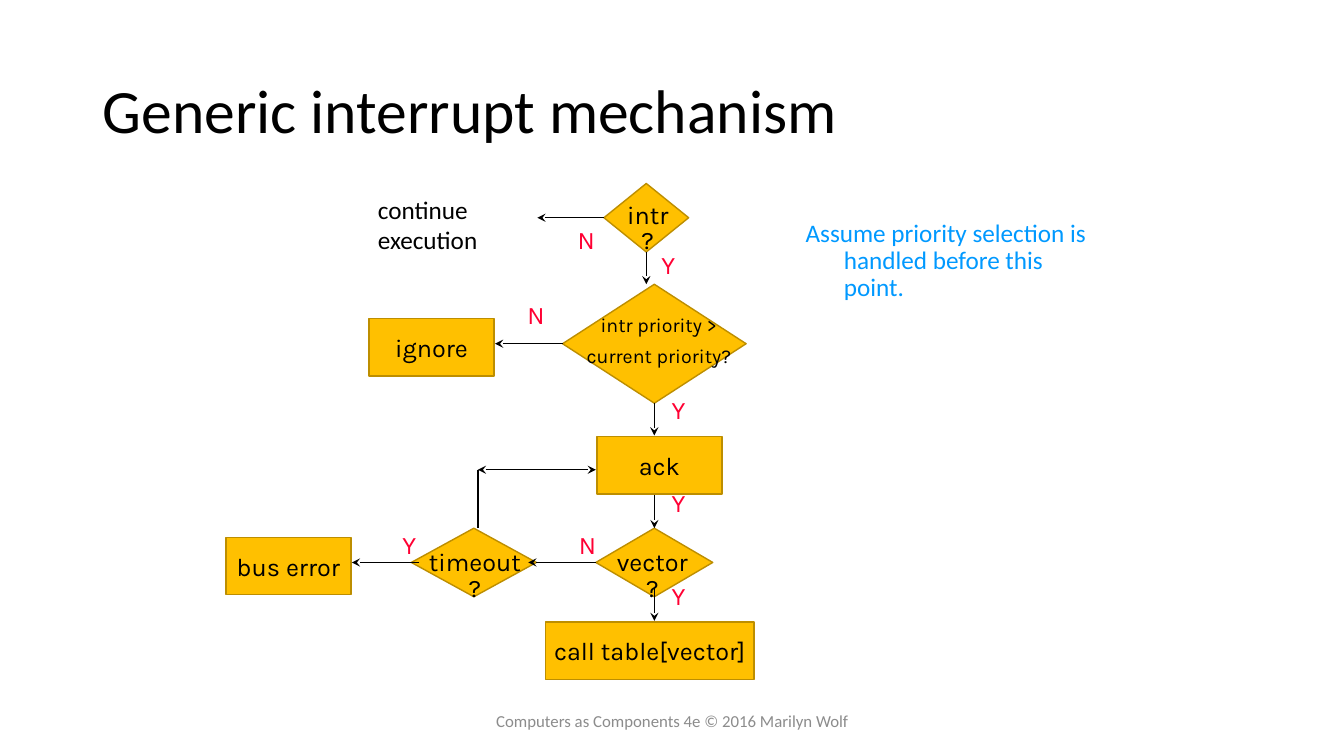
from pptx import Presentation
from pptx.dml.color import RGBColor
from pptx.enum.shapes import MSO_CONNECTOR, MSO_SHAPE
from pptx.enum.text import MSO_ANCHOR, PP_ALIGN
from pptx.oxml.ns import qn
from pptx.util import Inches, Pt
from lxml.etree import SubElement

BLACK, AMBER, AMBER_EDGE = "000000", "FFC000", "BD8E00"
RED, BLUE, GRAY = "FF0033", "0099FF", "8C8C8C"
TOP, LEFT, BOTTOM = 0, 1, 2


def color(hex_string):
    return RGBColor.from_string(hex_string)


def apply(target, values):
    for name, value in values.items():
        setattr(target, name, value)


class FlowchartPage:
    """Hold the slide and its style, and draw each kind of flowchart element."""

    def __init__(self, page):
        self.page = page

    def fill_text(self, shape, lines, size=18, font="Karla", ink=BLACK, align=PP_ALIGN.LEFT,
                  spacing=1.0, gap=0, hanging=0, anchor=MSO_ANCHOR.TOP, margins=(0.1, 0.05),
                  wrap=True):
        frame = shape.text_frame
        side, edge = (Inches(margin) for margin in margins)
        apply(frame, {"word_wrap": wrap, "vertical_anchor": anchor, "margin_left": side,
                      "margin_right": side, "margin_top": edge, "margin_bottom": edge})
        for index, line in enumerate(lines):
            para = frame.add_paragraph() if index else frame.paragraphs[0]
            apply(para, {"alignment": align, "line_spacing": spacing,
                         "space_before": Pt(gap if index else 0)})
            if hanging:
                properties = para._p.get_or_add_pPr()
                properties.set("marL", str(Inches(hanging)))
                properties.set("indent", str(-Inches(hanging)))
            span = para.add_run()
            span.text = line
            apply(span.font, {"size": Pt(size), "name": font})
            span.font.color.rgb = color(ink)

    def title(self, words, place):
        box = self.page.shapes.title
        apply(box, dict(zip(("left", "top", "width", "height"), map(Inches, place))))
        self.fill_text(box, [words], size=44, font="Calibri", spacing=0.9,
                       anchor=MSO_ANCHOR.MIDDLE)

    def text(self, lines, place, **style):
        box = self.page.shapes.add_textbox(*map(Inches, place))
        self.fill_text(box, lines, **style)

    def label(self, words, place, **style):
        self.text([words], place, spacing=0.85, margins=(0.07, 0.03), **style)

    def node(self, kind, place):
        shape = self.page.shapes.add_shape(kind, *map(Inches, place))
        shape.shadow.inherit = False
        shape.fill.solid()
        shape.fill.fore_color.rgb = color(AMBER)
        shape.line.color.rgb = color(AMBER_EDGE)
        shape.line.width = Pt(1)
        return shape

    def step(self, words, left, top, width=1.24):
        shape = self.node(MSO_SHAPE.RECTANGLE, (left, top, width, 0.57))
        self.fill_text(shape, [words], align=PP_ALIGN.CENTER, anchor=MSO_ANCHOR.MIDDLE, wrap=False)

    def arrow(self, start, end, begin=None, finish=None, heads=("tailEnd",)):
        line = self.page.shapes.add_connector(MSO_CONNECTOR.STRAIGHT, *map(Inches, start + end))
        if begin:
            line.begin_connect(*begin)
        if finish:
            line.end_connect(*finish)
        line.line.color.rgb = color(BLACK)
        line.line.width = Pt(1)
        outline = line.line._get_or_add_ln()
        for head in heads:
            SubElement(outline, qn(f"a:{head}"), type="stealth")
        SubElement(line._element.spPr, qn("a:effectLst"))


def main():
    deck = Presentation()
    deck.slide_width, deck.slide_height = Inches(13.33), Inches(7.5)
    chart = FlowchartPage(deck.slides.add_slide(deck.slide_layouts[5]))
    chart.title("Generic interrupt mechanism", (0.92, 0.4, 11.5, 1.45))

    chart.node(MSO_SHAPE.DIAMOND, (4.08, 5.24, 1.24, 0.68))
    intr, priority, vector = (
        chart.node(MSO_SHAPE.DIAMOND, place) for place in (
            (5.99, 1.82, 0.84, 0.68), (5.58, 2.82, 1.82, 1.18), (5.91, 5.24, 1.16, 0.68)))

    chart.step("ignore", 3.66, 3.16)
    chart.step("ack", 5.92, 4.33)
    chart.step("bus error", 2.24, 5.33)
    chart.step("call table[vector]", 5.41, 6.17, 2.07)

    for question, left, top, width in (("intr?", 6.11, 1.99, 0.63), ("vector?", 6, 5.44, 0.94),
                                       ("timeout?", 4.16, 5.44, 1.1)):
        chart.label(question, (left, top, width, 0.31), align=PP_ALIGN.CENTER)
    chart.text(["intr priority >", "current priority?"], (5.54, 3.11, 1.99, 0.57), size=14,
               align=PP_ALIGN.CENTER, spacing=0.88, gap=7, hanging=0.38, margins=(0.07, 0.03))

    chart.arrow((5.99, 2.16), (5.33, 2.16), begin=(intr, LEFT))
    chart.arrow((6.41, 2.5), (6.41, 2.82), begin=(intr, BOTTOM))
    chart.arrow((5.58, 3.41), (4.91, 3.41), begin=(priority, LEFT))
    chart.arrow((6.49, 4), (6.49, 4.32), begin=(priority, BOTTOM))
    chart.arrow((6.49, 4.91), (6.49, 5.24), finish=(vector, TOP))
    chart.arrow((6.49, 5.83), (6.49, 6.16))
    chart.arrow((5.91, 5.58), (5.24, 5.58), begin=(vector, LEFT))
    chart.arrow((4.16, 5.58), (3.49, 5.58))
    chart.arrow((4.74, 5.24), (4.74, 4.66), heads=())
    chart.arrow((4.74, 4.66), (5.91, 4.66), heads=("headEnd", "tailEnd"))

    for answer, left, top in (("N", 5.66, 2.24), ("Y", 6.49, 2.49), ("N", 5.16, 2.99),
                              ("Y", 6.59, 3.93), ("Y", 6.59, 4.85), ("Y", 6.59, 5.77),
                              ("N", 5.67, 5.27), ("Y", 3.92, 5.27)):
        chart.label(answer, (left, top, 0.31, 0.31), ink=RED, wrap=False)

    chart.text(["continue", "execution"], (3.65, 1.88, 1.2, 0.71), font="Calibri")
    chart.text(["Assume priority selection is handled before this point."], (7.92, 2.17, 2.99, 0.86),
               font="Calibri", ink=BLUE, spacing=0.88, hanging=0.38, margins=(0.07, 0.03))
    chart.text(["Computers as Components 4e © 2016 Marilyn Wolf"], (4.42, 6.95, 4.5, 0.4), size=12,
               font="Calibri", ink=GRAY, align=PP_ALIGN.CENTER, anchor=MSO_ANCHOR.MIDDLE)
    deck.save("out.pptx")


if __name__ == "__main__":
    main()
